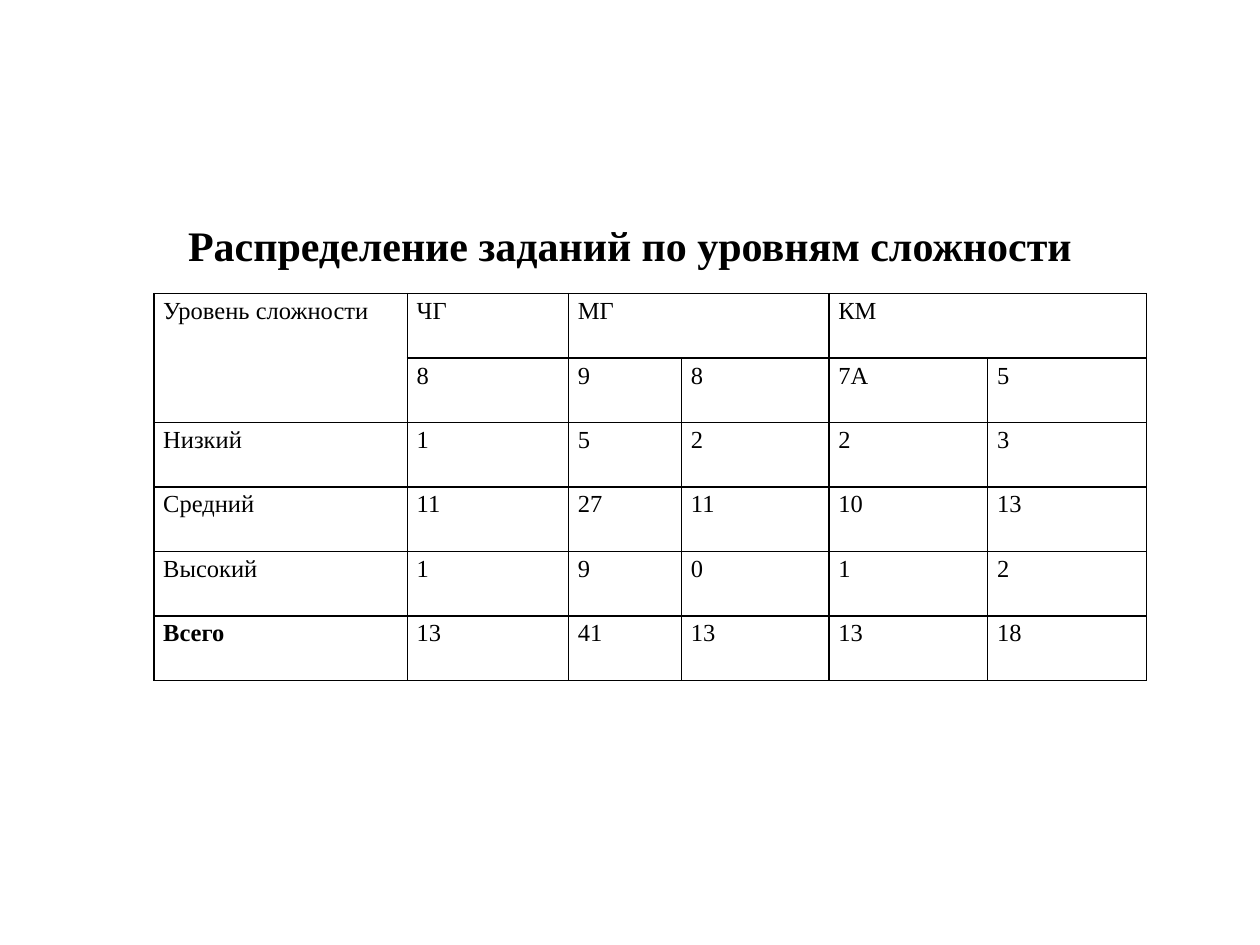
from dataclasses import dataclass

from lxml.etree import fromstring
from pptx import Presentation
from pptx.dml.color import RGBColor
from pptx.enum.text import MSO_ANCHOR, MSO_AUTO_SIZE, PP_ALIGN
from pptx.util import Cm, Pt

NS = "http://schemas.openxmlformats.org/drawingml/2006/main"


@dataclass(frozen=True)
class Theme:
    font: str = "Times New Roman"
    ink: str = "000000"
    paper: str = "FFFFFF"
    title: int = 24
    body: int = 14
    line: int = 1


class Deck:
    def __init__(self, theme):
        self.theme = theme
        self.prs = Presentation()
        self.prs.slide_width, self.prs.slide_height = Cm(25.4), Cm(19.05)
        self.slide = self.prs.slides.add_slide(self.prs.slide_layouts[5])
        fill = self.slide.background.fill
        fill.solid()
        fill.fore_color.rgb = RGBColor.from_string(theme.paper)

    def style(self, par, size, bold, align):
        par.alignment = align
        for run in par.runs:
            font = run.font
            font.name, font.size, font.bold = self.theme.font, Pt(size), bold
            font.color.rgb = RGBColor.from_string(self.theme.ink)

    def title(self, text, left, top, width, height):
        box = self.slide.shapes.title
        box.left, box.top = Cm(left), Cm(top)
        box.width, box.height = Cm(width), Cm(height)
        frame = box.text_frame
        frame.text = text
        frame.auto_size = MSO_AUTO_SIZE.SHAPE_TO_FIT_TEXT
        frame.vertical_anchor = MSO_ANCHOR.MIDDLE
        self.style(frame.paragraphs[0], self.theme.title, True, PP_ALIGN.CENTER)

    def border(self, cell):
        """Draw a solid line on all four sides of the cell."""
        props = cell._tc.get_or_add_tcPr()
        for i, side in enumerate("LRTB"):
            props.insert(i, fromstring(
                f'<a:ln{side} xmlns:a="{NS}" w="{Pt(self.theme.line)}"><a:solidFill>'
                f'<a:srgbClr val="{self.theme.ink}"/></a:solidFill></a:ln{side}>'))

    def cell(self, cell, text, bold):
        cell.margin_left = cell.margin_right = Cm(0.19)
        cell.margin_top = cell.margin_bottom = 0
        cell.fill.background()
        self.border(cell)
        cell.text_frame.text = text
        par = cell.text_frame.paragraphs[0]
        par.line_spacing = 1.15
        self.style(par, self.theme.body, bold, PP_ALIGN.JUSTIFY)

    def table(self, rows, widths, high, left, top, spans, strong):
        """Spans are pairs of corner cells to merge; strong holds bold texts."""
        grid = self.slide.shapes.add_table(
            len(rows), len(widths), Cm(left), Cm(top),
            Cm(sum(widths)), Cm(high * len(rows))).table
        grid.first_row = grid.horz_banding = False
        for col, width in zip(grid.columns, widths):
            col.width = Cm(width)
        for r, row in enumerate(rows):
            grid.rows[r].height = Cm(high)
            for c, text in enumerate(row):
                self.cell(grid.cell(r, c), text, text in strong)
        for start, end in spans:
            grid.cell(*start).merge(grid.cell(*end))

    def save(self):
        self.prs.save("out.pptx")


LEVELS = [
    ["Уровень сложности", "ЧГ", "МГ", "", "КМ", ""],
    ["", "8", "9", "8", "7А", "5"],
    ["Низкий", "1", "5", "2", "2", "3"],
    ["Средний", "11", "27", "11", "10", "13"],
    ["Высокий", "1", "9", "0", "1", "2"],
    ["Всего", "13", "41", "13", "13", "18"],
]


def main():
    deck = Deck(Theme())
    deck.table(
        LEVELS, widths=[5.11, 3.25, 2.28, 2.97, 3.2, 3.2], high=1.3,
        left=3.1, top=5.92,
        spans=[((0, 0), (1, 0)), ((0, 2), (0, 3)), ((0, 4), (0, 5))],
        strong={"Всего"})
    deck.title("Распределение заданий по уровням сложности", 0, 4.3, 25.4, 1.28)
    deck.save()


if __name__ == "__main__":
    main()
